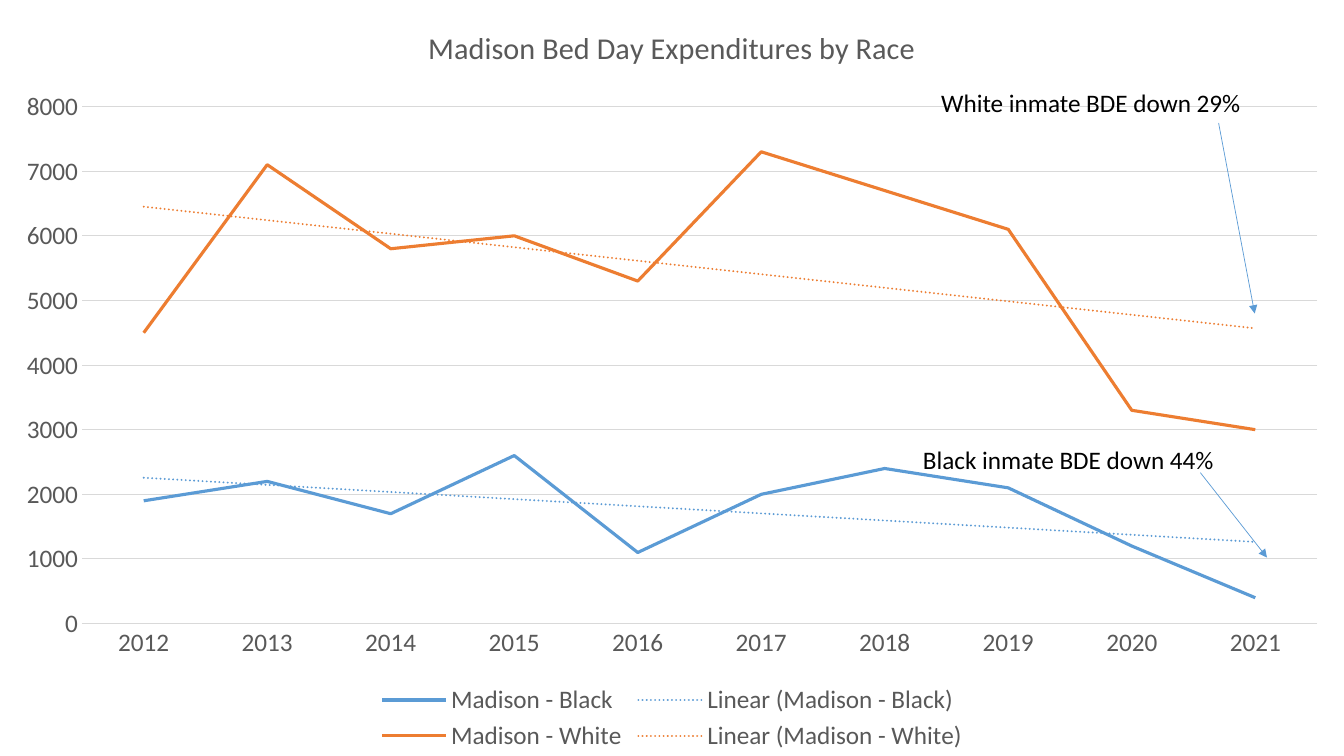
from dataclasses import dataclass

from lxml import etree
from pptx import Presentation
from pptx import util as u
from pptx.chart import data as cd
from pptx.dml.color import RGBColor
from pptx.enum import chart as ce, shapes, text
from pptx.oxml import parse_xml
from pptx.oxml.ns import nsdecls, qn


@dataclass(frozen=True)
class Theme:
    font: str = "Calibri"
    title_size: float = 21.6
    size: float = 18
    ink: str = "000000"
    gray: str = "595959"
    grid: str = "D9D9D9"
    blue: str = "5B9BD5"
    orange: str = "ED7D31"


theme = Theme()


def style(font, size, color):
    font.name = theme.font
    font.size = u.Pt(size)
    font.bold = False
    font.color.rgb = RGBColor.from_string(color)


def layout(x, y, w, h, target=""):
    return parse_xml(
        f'<c:layout {nsdecls("c")}><c:manualLayout>{target}'
        '<c:xMode val="edge"/><c:yMode val="edge"/>'
        f'<c:x val="{x}"/><c:y val="{y}"/><c:w val="{w}"/><c:h val="{h}"/>'
        '</c:manualLayout></c:layout>')


prs = Presentation()
prs.slide_width, prs.slide_height = u.Cm(33.87), u.Cm(19.05)
s = prs.slides.add_slide(prs.slide_layouts[6])

series = [
    ("Madison - Black", theme.blue,
     [1900, 2200, 1700, 2600, 1100, 2000, 2400, 2100, 1200, 400]),
    ("Madison - White", theme.orange,
     [4500, 7100, 5800, 6000, 5300, 7300, 6700, 6100, 3300, 3000]),
]
data = cd.CategoryChartData()
data.categories = [str(year) for year in range(2012, 2022)]
for name, color, values in series:
    data.add_series(name, values)

chart = s.shapes.add_chart(
    ce.XL_CHART_TYPE.LINE, 0, 0, prs.slide_width, prs.slide_height, data).chart
style(chart.font, theme.size, theme.gray)
chart.plots[0].vary_by_categories = False

chart.has_title = True
p = chart.chart_title.text_frame.paragraphs[0]
p.text = "Madison Bed Day Expenditures by Race"
style(p.font, theme.title_size, theme.gray)
chart.chart_title.include_in_layout = False

chart.has_legend = True
chart.legend.position = ce.XL_LEGEND_POSITION.BOTTOM
chart.legend.include_in_layout = False
style(chart.legend.font, theme.size, theme.gray)
legend_pos = chart.legend._element.find(qn("c:legendPos"))
legend_pos.addnext(layout(0.28, 0.9, 0.45, 0.1))

plot_area = chart._chartSpace.chart.plotArea
for old in plot_area.findall(qn("c:layout")):
    plot_area.remove(old)
plot_area.insert(0, layout(0.061, 0.141, 0.919, 0.684,
                           '<c:layoutTarget val="inner"/>'))

for axis in (chart.category_axis, chart.value_axis):
    axis.major_tick_mark = axis.minor_tick_mark = ce.XL_TICK_MARK.NONE
    style(axis.tick_labels.font, theme.size, theme.gray)
chart.value_axis.minimum_scale = 0
chart.value_axis.maximum_scale = 8000
chart.value_axis.major_unit = 1000
chart.value_axis.format.line.fill.background()
for line in (chart.category_axis.format.line,
             chart.value_axis.major_gridlines.format.line):
    line.color.rgb = RGBColor.from_string(theme.grid)
    line.width = u.Pt(0.75)

for ser, (name, color, values) in zip(chart.plots[0].series, series):
    ser.smooth = False
    ser.marker.style = ce.XL_MARKER_STYLE.NONE
    ser.format.line.color.rgb = RGBColor.from_string(color)
    ser.format.line.width = u.Pt(2.25)
    ser._element.find(qn("c:cat")).addprevious(parse_xml(
        f'<c:trendline {nsdecls("c", "a")}><c:spPr>'
        f'<a:ln w="{u.Pt(1.5)}" cap="rnd"><a:solidFill><a:srgbClr val="{color}"/>'
        '</a:solidFill><a:prstDash val="sysDot"/></a:ln></c:spPr>'
        '<c:trendlineType val="linear"/><c:dispRSqr val="0"/>'
        '<c:dispEq val="0"/></c:trendline>'))

notes = [
    ("White inmate BDE down 29%", (23.47, 2.08, 8.15, 1.02),
     (30.71, 3.1, 31.62, 7.9)),
    ("Black inmate BDE down 44%", (23.01, 11.07, 7.92, 1.02),
     (30.25, 11.91, 31.93, 14.05)),
]
for words, box, arrow in notes:
    sp = s.shapes.add_textbox(*map(u.Cm, box))
    tf = sp.text_frame
    tf.word_wrap = False
    tf.auto_size = text.MSO_AUTO_SIZE.SHAPE_TO_FIT_TEXT
    p = tf.paragraphs[0]
    p.text = words
    style(p.font, theme.size, theme.ink)

    cxn = s.shapes.add_connector(shapes.MSO_CONNECTOR.STRAIGHT, *map(u.Cm, arrow))
    cxn.line.color.rgb = RGBColor.from_string(theme.blue)
    cxn.line.width = u.Pt(0.5)
    etree.SubElement(cxn.line._get_or_add_ln(), qn("a:tailEnd"), type="triangle")
    etree.SubElement(cxn._element.spPr, qn("a:effectLst"))

prs.save("out.pptx")
